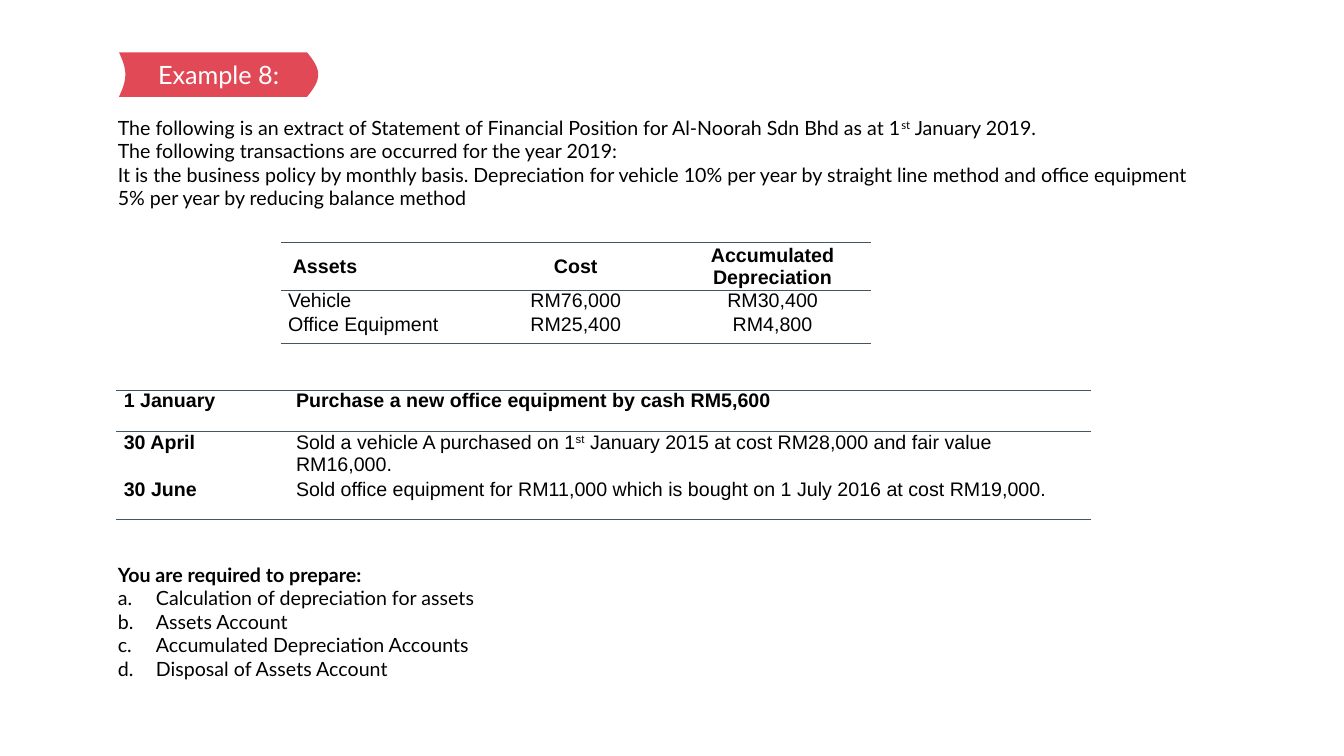
from math import pi, sin

from lxml.etree import SubElement
from pptx import Presentation
from pptx.dml.color import RGBColor
from pptx.enum.text import MSO_ANCHOR, MSO_AUTO_SIZE, PP_ALIGN
from pptx.oxml.ns import qn
from pptx.util import Cm, Pt

BLACK, WHITE, RED, SLATE = "000000", "FFFFFF", "E24956", "445469"

INTRO = [
    "The following is an extract of Statement of Financial Position for "
    "Al-Noorah Sdn Bhd as at 1^st^ January 2019.",
    "The following transactions are occurred for the year 2019:",
    "It is the business policy by monthly basis. Depreciation for vehicle 10% per year "
    "by straight line method and office equipment 5% per year by reducing balance method",
]
TASKS = [
    "Calculation of depreciation for assets",
    "Assets Account",
    "Accumulated Depreciation Accounts",
    "Disposal of Assets Account",
]
ASSETS = [
    [" Assets", "Cost", "Accumulated Depreciation"],
    ["Vehicle", "RM76,000", "RM30,400"],
    ["Office Equipment", "RM25,400", "RM4,800"],
]
TRANSACTIONS = [
    ["1 January", "Purchase a new office equipment by cash RM5,600"],
    ["30 April", "Sold a vehicle A purchased on 1^st^ January 2015 at cost RM28,000 "
                 "and fair value RM16,000."],
    ["30 June", "Sold office equipment for RM11,000 which is bought on 1 July 2016 "
                "at cost RM19,000."],
]


def rgb(color):
    return RGBColor.from_string(color)


def write(p, text, font, size=14, color=BLACK, bold=False, align=PP_ALIGN.LEFT):
    """Fill a paragraph; text between two ^ marks is superscript."""
    p.alignment = align
    p.font.name, p.font.size, p.font.bold = font, Pt(size), bold
    p.font.color.rgb = rgb(color)
    for i, part in enumerate(text.split("^")):
        r = p.add_run()
        r.text = part
        if i % 2:
            r.font._element.set("baseline", "30000")


def number(p):
    """Letter a paragraph a., b., c. with a hanging indent."""
    pPr = p._p.get_or_add_pPr()
    pPr.set("marL", str(Cm(0.96)))
    pPr.set("indent", str(-Cm(0.96)))
    bullet = pPr.makeelement(qn("a:buAutoNum"), {"type": "alphaLcPeriod"})
    pPr.insert(0, bullet)


def add_text(s, top, height, lines, heading=None):
    """Add plain lines, or a bold heading with lettered lines."""
    tf = s.shapes.add_textbox(Cm(2.72), Cm(top), Cm(28.17), Cm(height)).text_frame
    tf.word_wrap = True
    p = tf.paragraphs[0]
    if heading:
        write(p, heading, "Lato", bold=True)
    for i, line in enumerate(lines):
        if heading or i:
            p = tf.add_paragraph()
        write(p, line, "Lato")
        if heading:
            number(p)


def set_borders(cell, ruled):
    """Rule the sides named in ruled and clear the others."""
    tcPr = cell._tc.get_or_add_tcPr()
    for side in "LRTB":
        ln = SubElement(tcPr, qn(f"a:ln{side}"), w=str(Pt(1)))
        if side in ruled:
            fill = SubElement(ln, qn("a:solidFill"))
            SubElement(fill, qn("a:srgbClr"), val=SLATE)
        else:
            SubElement(ln, qn("a:noFill"))


def add_ruled_table(s, left, top, widths, heights, rows, centered=(), bold_columns=()):
    table = s.shapes.add_table(len(rows), len(widths), Cm(left), Cm(top),
                               Cm(sum(widths)), Cm(sum(heights))).table
    table.horz_banding = False
    for column, width in zip(table.columns, widths):
        column.width = Cm(width)
    for i, (row, height) in enumerate(zip(rows, heights)):
        table.rows[i].height = Cm(height)
        for j, text in enumerate(row):
            cell = table.cell(i, j)
            cell.margin_left = cell.margin_right = Cm(0.19)
            cell.margin_top = cell.margin_bottom = 0
            if centered and i == 0:
                cell.vertical_anchor = MSO_ANCHOR.MIDDLE
            set_borders(cell, {0: "TB", 1: "T", len(rows) - 1: "B"}.get(i, ""))
            cell.fill.solid()
            cell.fill.fore_color.rgb = rgb(WHITE)
            write(cell.text_frame.paragraphs[0], text, "Arial",
                  bold=i == 0 or j in bold_columns,
                  align=PP_ALIGN.CENTER if j in centered else PP_ALIGN.LEFT)


def add_banner(s, left, top, width, height):
    """Draw a ribbon with a notched left end and a rounded right end."""
    notch, bulge, steps = 0.16, 0.28, 24
    arc = [(sin(pi * i / steps), height * i / steps) for i in range(steps + 1)]
    right = [(left + width - bulge + bulge * x, top + y) for x, y in arc]
    inner = [(left + notch * x, top + y) for x, y in reversed(arc)]
    points = [(Cm(x), Cm(y)) for x, y in right + inner]
    builder = s.shapes.build_freeform(*points[0])
    builder.add_line_segments(points[1:], close=True)
    sp = builder.convert_to_shape()
    sp.shadow.inherit = False
    sp.fill.solid()
    sp.fill.fore_color.rgb = rgb(RED)
    sp.line.fill.background()


def set_title(s, text, left, top, width, height):
    title = s.shapes.title
    title.left, title.top, title.width, title.height = map(Cm, (left, top, width, height))
    tf = title.text_frame
    tf.auto_size = MSO_AUTO_SIZE.NONE
    tf.vertical_anchor = MSO_ANCHOR.MIDDLE
    tf.margin_top = tf.margin_bottom = 0
    write(tf.paragraphs[0], text, "Lato", 18, WHITE, align=PP_ALIGN.CENTER)
    s.shapes._spTree.append(title._element)  # in front of the banner


def main():
    prs = Presentation()
    prs.slide_width, prs.slide_height = Cm(33.87), Cm(19.05)
    s = prs.slides.add_slide(prs.slide_layouts[5])

    add_text(s, 2.79, 2.63, INTRO)
    add_text(s, 14.05, 3.22, TASKS, heading="You are required to prepare:")
    add_ruled_table(s, 2.93, 9.83, [4.34, 20.23], [1.04, 1.18, 1.04],
                    TRANSACTIONS, bold_columns=[0])
    add_ruled_table(s, 7.07, 6.12, [4.96] * 3, [1.19, 0.6, 0.74], ASSETS, centered=[1, 2])

    banner = 3, 1.32, 5.02, 1.12
    add_banner(s, *banner)
    set_title(s, "Example 8:", *banner)
    prs.save("out.pptx")


if __name__ == "__main__":
    main()
